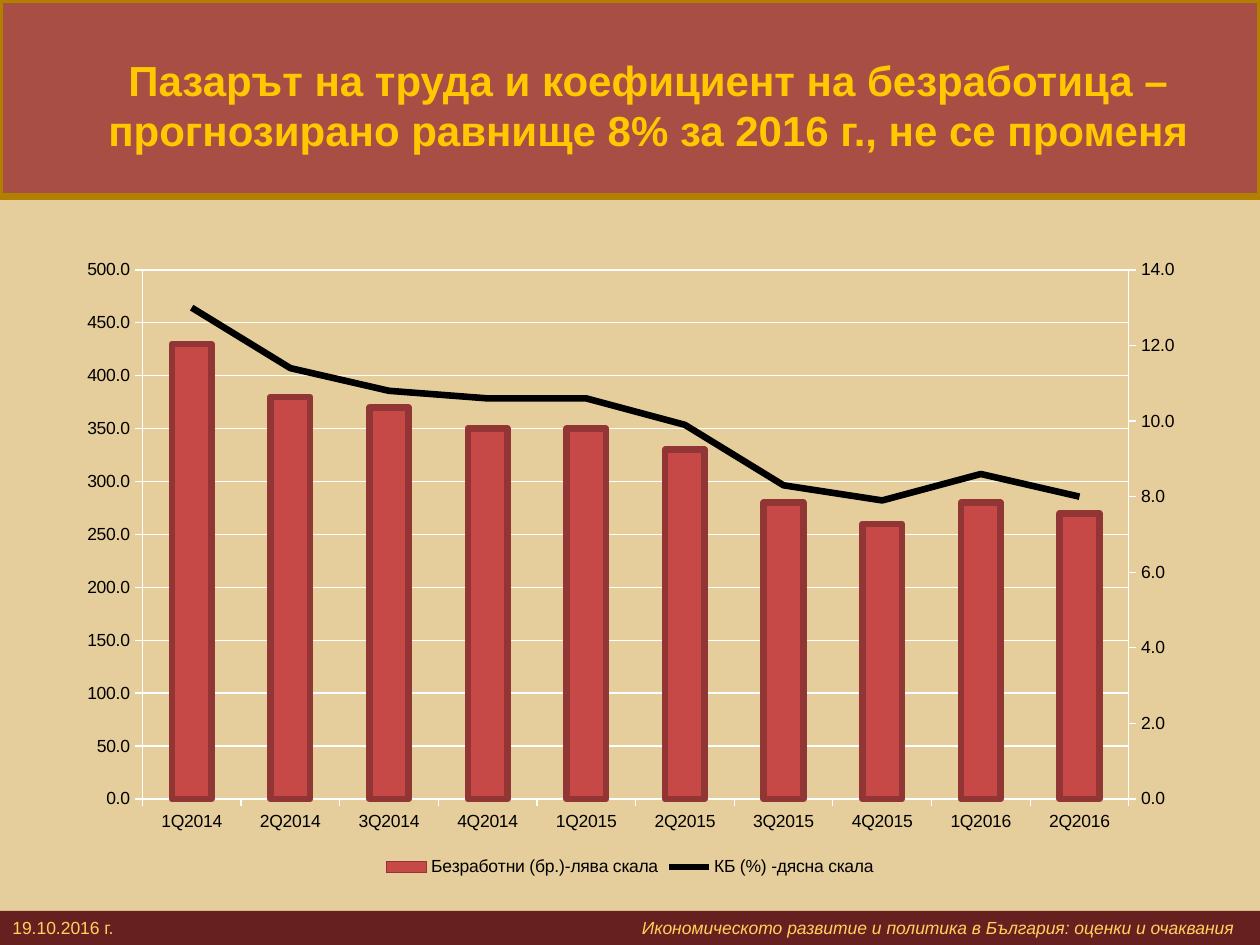
"""Build the slide on the labour market and the unemployment rate."""
from copy import deepcopy
from lxml.etree import SubElement
from pptx import Presentation
from pptx.chart.data import CategoryChartData as Data
from pptx.dml.color import RGBColor
from pptx.enum.chart import XL_CHART_TYPE as Kind, XL_LEGEND_POSITION as Spot
from pptx.enum.chart import XL_MARKER_STYLE as Mark, XL_TICK_MARK as Tick
from pptx.enum.shapes import MSO_SHAPE as Shape
from pptx.enum.text import MSO_ANCHOR as Anchor, PP_ALIGN as Align
from pptx.oxml import parse_xml
from pptx.oxml.ns import nsdecls, qn
from pptx.util import Inches, Pt

TITLE = ("Пазарът на труда и коефициент на безработица – "
         "прогнозирано равнище 8% за 2016 г., не се променя")
DATE = "19.10.2016 г."
TOPIC = "Икономическото развитие и политика в България: оценки и очаквания"
CATS = ["1Q2014", "2Q2014", "3Q2014", "4Q2014", "1Q2015",
        "2Q2015", "3Q2015", "4Q2015", "1Q2016", "2Q2016"]
SERIES = [
    ("Безработни (бр.)-лява скала",
     [430, 380, 370, 350, 350, 330, 280, 260, 280, 270]),
    ("КБ (%) -дясна скала",
     [13, 11.4, 10.8, 10.6, 10.6, 9.9, 8.3, 7.9, 8.6, 8]),
]
COLORS = {"back": "E5CE9B", "band": "A84E45", "edge": "B28000",
          "title": "FFC800", "foot": "672020", "note": "FFD25D",
          "bar": "C64847", "rim": "923535", "ink": "000000", "grid": "FFFFFF"}
PLOT = {"x": 0.07, "y": 0.04, "w": 0.87, "h": 0.83}
EDGE = 3.78


def color(name):
    return RGBColor.from_string(COLORS[name])


def fill(item, name):
    item.fill.solid()
    item.fill.fore_color.rgb = color(name)


def stroke(line, name, width):
    line.color.rgb = color(name)
    line.width = Pt(width)


def place(shape, *box):
    shape.left, shape.top, shape.width, shape.height = map(Inches, box)


def add_run(para, text, size, name, bold=False, italic=False):
    run = para.add_run()
    run.text = text
    font = run.font
    font.name, font.size, font.bold, font.italic = "Arial", Pt(size), bold, italic
    font.color.rgb = color(name)


def add_band(slide, name, *box):
    band = slide.shapes.add_shape(Shape.RECTANGLE, *map(Inches, box))
    band.shadow.inherit = False
    fill(band, name)
    band.line.fill.background()
    return band


def add_head(slide):
    band = add_band(slide, "band", 0, 0, 10, 1.56)
    stroke(band.line, "edge", EDGE)
    title = slide.shapes.title
    band.element.addnext(title.element)
    place(title, 0.62, 0.29, 9, 1.08)
    frame = title.text_frame
    frame.word_wrap = True
    frame.vertical_anchor = Anchor.MIDDLE
    frame.margin_left = Inches(0.1)
    frame.margin_right = frame.margin_top = frame.margin_bottom = Inches(0.05)
    para = frame.paragraphs[0]
    para.alignment = Align.CENTER
    add_run(para, TITLE, 24, "title", bold=True)


def add_foot(slide):
    frame = add_band(slide, "foot", 0, 7.23, 10, 0.27).text_frame
    frame.vertical_anchor = Anchor.MIDDLE
    para = frame.paragraphs[0]
    para.alignment = Align.LEFT
    tabs = SubElement(para._p.get_or_add_pPr(), qn("a:tabLst"))
    SubElement(tabs, qn("a:tab"), pos=str(Inches(9.69)), algn="r")
    add_run(para, DATE + "\t", 10, "note")
    add_run(para, TOPIC, 10, "note", italic=True)


def style_axis(axis):
    axis.major_tick_mark = Tick.OUTSIDE
    axis.minor_tick_mark = Tick.NONE
    stroke(axis.format.line, "grid", 0.75)


def set_scale(axis, top, step):
    axis.minimum_scale, axis.maximum_scale, axis.major_unit = 0, top, step


def drop(node, tag):
    for old in node.findall(qn(tag)):
        node.remove(old)


def set_plot(area):
    drop(area, "c:layout")
    layout = parse_xml(f"<c:layout {nsdecls('c')}/>")
    area.insert(0, layout)
    manual = SubElement(layout, qn("c:manualLayout"))
    SubElement(manual, qn("c:layoutTarget"), val="inner")
    for key in "xy":
        SubElement(manual, qn(f"c:{key}Mode"), val="edge")
    for key, part in PLOT.items():
        SubElement(manual, qn(f"c:{key}"), val=str(part))


def put(node, tag, val):
    child = node.find(qn(tag))
    if child is not None:
        child.set("val", val)


def add_right(chart, area):
    bars = area.find(qn("c:barChart"))
    rate = bars.findall(qn("c:ser"))[1]
    drop(rate, "c:invertIfNegative")
    lines = parse_xml(f'<c:lineChart {nsdecls("c")}><c:grouping val="standard"/>'
                      '<c:varyColors val="0"/></c:lineChart>')
    lines.append(rate)
    SubElement(lines, qn("c:marker"), val="1")
    bars.addnext(lines)
    left = chart.value_axis
    cat = deepcopy(chart.category_axis._element)
    set_scale(left, 14, 2)
    val = deepcopy(left._element)
    set_scale(left, 500, 50)
    for axis, own, other in ((cat, "501", "502"), (val, "502", "501")):
        SubElement(lines, qn("c:axId"), val=own)
        put(axis, "c:axId", own)
        put(axis, "c:crossAx", other)
    put(cat, "c:delete", "1")
    drop(val, "c:majorGridlines")
    put(val, "c:axPos", "r")
    put(val, "c:crosses", "max")
    left._element.addnext(val)
    val.addnext(cat)


def add_graph(slide):
    data = Data(number_format="0.0")
    data.categories = CATS
    for name, vals in SERIES:
        data.add_series(name, vals)
    box = map(Inches, (0.5, 1.94, 9, 5.06))
    chart = slide.shapes.add_chart(Kind.COLUMN_CLUSTERED, *box, data).chart
    chart.has_title = False
    chart.font.name, chart.font.size = "Arial", Pt(10)
    chart.font.color.rgb = color("ink")
    chart.has_legend = True
    chart.legend.position = Spot.BOTTOM
    chart.legend.include_in_layout = False
    left = chart.value_axis
    style_axis(chart.category_axis)
    style_axis(left)
    left.has_major_gridlines = True
    stroke(left.major_gridlines.format.line, "grid", 0.75)
    left.tick_labels.number_format = "0.0"
    left.tick_labels.number_format_is_linked = False
    area = left._element.getparent()
    set_plot(area)
    add_right(chart, area)
    bars, lines = chart.plots
    bars.gap_width = 150
    bars.vary_by_categories = False
    jobless, rate = bars.series[0], lines.series[0]
    fill(jobless.format, "bar")
    stroke(jobless.format.line, "rim", EDGE)
    stroke(rate.format.line, "ink", EDGE)
    rate.marker.style = Mark.NONE
    rate.smooth = False


def main():
    deck = Presentation()
    deck.slide_width, deck.slide_height = Inches(10), Inches(7.5)
    slide = deck.slides.add_slide(deck.slide_layouts[5])
    fill(slide.background, "back")
    add_head(slide)
    add_graph(slide)
    add_foot(slide)
    deck.save("out.pptx")


if __name__ == "__main__":
    main()
